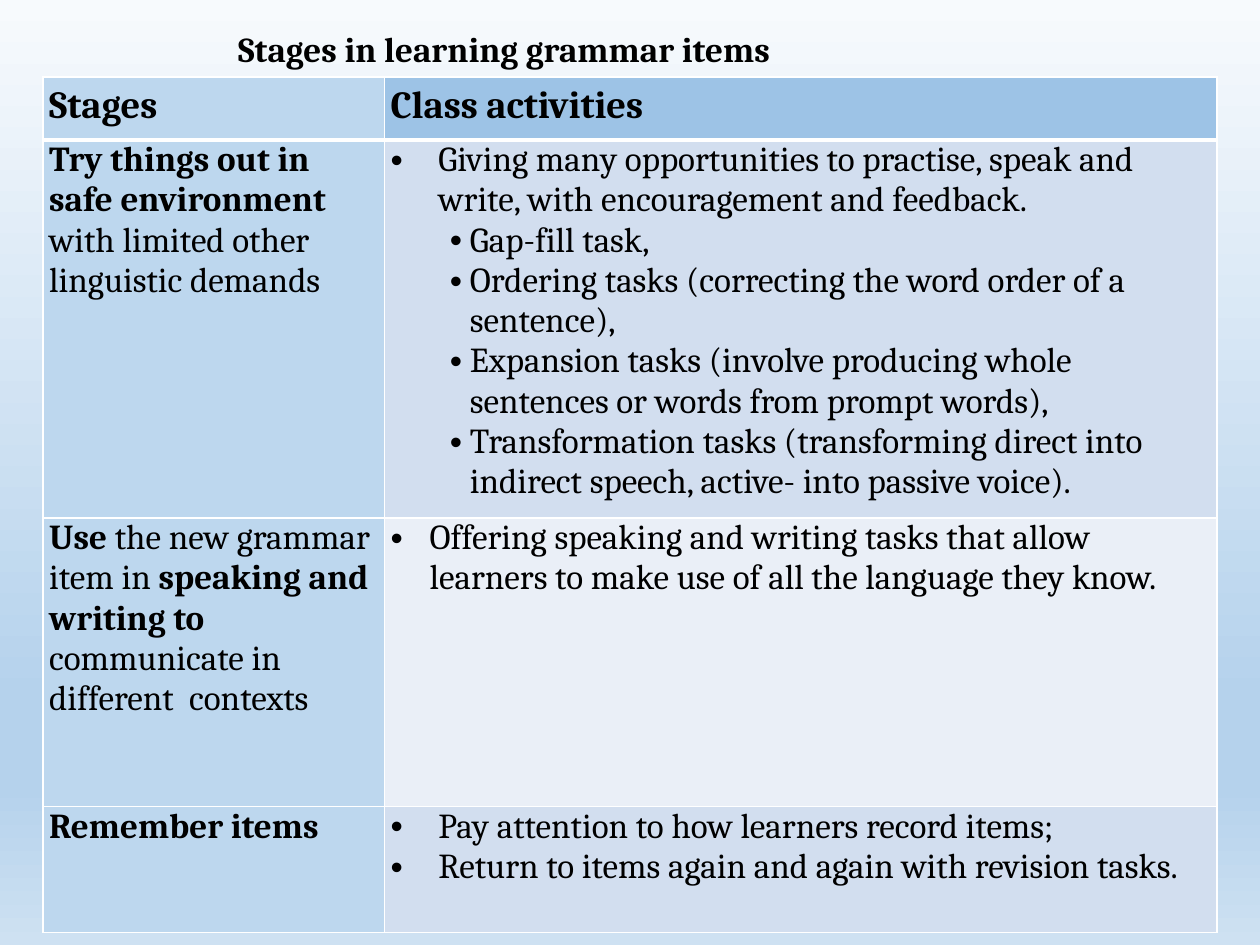
from dataclasses import dataclass

import pptx
import pptx.dml.color
import pptx.enum.text
import pptx.oxml
import pptx.oxml.ns
import pptx.util
from lxml import etree

Inches = pptx.util.Inches
Pt = pptx.util.Pt
RGBColor = pptx.dml.color.RGBColor
qn = pptx.oxml.ns.qn

FONT = "Cambria"
BLACK = RGBColor(0x00, 0x00, 0x00)
WHITE = RGBColor(0xFF, 0xFF, 0xFF)
STAGE_BLUE = RGBColor(0xBD, 0xD7, 0xEE)
HEADER_BLUE = RGBColor(0x9D, 0xC3, 0xE6)
DARK_BAND = RGBColor(0xD2, 0xDE, 0xEF)
LIGHT_BAND = RGBColor(0xEA, 0xEF, 0xF7)
BACKGROUND_STOPS = (
    (0, RGBColor(0xF7, 0xFA, 0xFD)),
    (74, RGBColor(0xB5, 0xD2, 0xEC)),
    (83, RGBColor(0xB5, 0xD2, 0xEC)),
    (100, RGBColor(0xCE, 0xE1, 0xF2)),
)


@dataclass(frozen=True)
class Span:
    text: str
    bold: bool = False


@dataclass(frozen=True)
class Activity:
    text: str
    indent: float = 0.38
    hanging: float = 0.38
    level: int = 0


@dataclass(frozen=True)
class Stage:
    spans: tuple[Span, ...]
    activities: tuple[Activity, ...]
    height: float
    band: RGBColor


def subtask(text: str) -> Activity:
    return Activity(text, indent=0.63, hanging=0.16, level=1)


HEADER_HEIGHT = 0.5
HEADERS = (("Stages", STAGE_BLUE), ("Class activities", HEADER_BLUE))
COLUMN_WIDTHS = (2.71, 6.61)
STAGES = (
    Stage(
        (Span("Try things out in safe environment ", True),
         Span("with limited other linguistic demands")),
        (Activity("Giving many opportunities to practise, speak and write, "
                  "with encouragement and feedback."),
         subtask("Gap-fill task,"),
         subtask("Ordering tasks (correcting the word order of a sentence),"),
         subtask("Expansion tasks (involve producing whole sentences or words "
                 "from prompt words),"),
         subtask("Transformation tasks (transforming direct into indirect speech, "
                 "active- into passive voice).")),
        2.99, DARK_BAND),
    Stage(
        (Span("Use ", True), Span("the new grammar item in "),
         Span("speaking and writing to ", True),
         Span("communicate in different  contexts")),
        (Activity("Offering speaking and writing tasks that allow learners to make "
                  "use of all the language they know.", indent=0.31, hanging=0.31),),
        2.29, LIGHT_BAND),
    Stage(
        (Span("Remember items", True),),
        (Activity("Pay attention to how learners record items;"),
         Activity("Return to items again and again with revision tasks.")),
        1.0, DARK_BAND),
)


def add_run(paragraph, span: Span, size: int = 20) -> None:
    run = paragraph.add_run()
    run.text = span.text
    run.font.name = FONT
    run.font.size = Pt(size)
    run.font.bold = span.bold
    run.font.color.rgb = BLACK


def add_color(parent, color: RGBColor) -> None:
    etree.SubElement(parent, qn("a:srgbClr"), val=str(color))


def paint_background(slide) -> None:
    slide.background.fill.gradient()
    gradient = slide.background._cSld.find(".//" + qn("a:gradFill"))
    for child in list(gradient):
        gradient.remove(child)
    stops = etree.SubElement(gradient, qn("a:gsLst"))
    for percent, color in BACKGROUND_STOPS:
        add_color(etree.SubElement(stops, qn("a:gs"), pos=str(percent * 1000)), color)
    etree.SubElement(gradient, qn("a:lin"), ang="5400000", scaled="0")


def style_cell(cell, fill: RGBColor, bottom_width: int = 1, top_width: int = 1) -> None:
    cell.margin_left = cell.margin_right = Inches(0.05)
    cell.margin_top = cell.margin_bottom = 0
    cell.fill.solid()
    cell.fill.fore_color.rgb = fill
    properties = cell._tc.get_or_add_tcPr()
    borders = (("a:lnL", 1), ("a:lnR", 1), ("a:lnT", top_width), ("a:lnB", bottom_width))
    for position, (side, width) in enumerate(borders):
        line = etree.Element(qn(side), w=str(Pt(width)))
        add_color(etree.SubElement(line, qn("a:solidFill")), WHITE)
        properties.insert(position, line)


def add_bullet(paragraph, activity: Activity) -> None:
    paragraph.level = activity.level
    properties = paragraph._p.get_or_add_pPr()
    properties.set("marL", str(Inches(activity.indent)))
    properties.set("indent", str(-Inches(activity.hanging)))
    etree.SubElement(properties, qn("a:buFont"), typeface="Arial")
    etree.SubElement(properties, qn("a:buChar"), char="•")


def write_activities(cell, activities: tuple[Activity, ...]) -> None:
    frame = cell.text_frame
    for index, activity in enumerate(activities):
        paragraph = frame.add_paragraph() if index else frame.paragraphs[0]
        add_bullet(paragraph, activity)
        add_run(paragraph, Span(activity.text))


def add_title(slide, text: str) -> None:
    title = slide.shapes.title
    title.left, title.top = Inches(1.79), Inches(0.17)
    title.width, title.height = Inches(6.68), Inches(0.44)
    frame = title.text_frame
    frame.word_wrap = True
    frame.auto_size = pptx.enum.text.MSO_AUTO_SIZE.SHAPE_TO_FIT_TEXT
    frame.vertical_anchor = pptx.enum.text.MSO_ANCHOR.TOP
    heading = frame.paragraphs[0]
    heading.alignment = pptx.enum.text.PP_ALIGN.LEFT
    add_run(heading, Span(text, True))


def add_stage_table(slide) -> None:
    heights = [HEADER_HEIGHT] + [stage.height for stage in STAGES]
    table = slide.shapes.add_table(
        len(heights), len(COLUMN_WIDTHS), Inches(0.34), Inches(0.61),
        Inches(sum(COLUMN_WIDTHS)), Inches(sum(heights))).table
    for column, width in zip(table.columns, COLUMN_WIDTHS):
        column.width = Inches(width)
    for row, height in zip(table.rows, heights):
        row.height = Inches(height)

    for column, (label, fill) in enumerate(HEADERS):
        cell = table.cell(0, column)
        style_cell(cell, fill, bottom_width=3)
        paragraph = cell.text_frame.paragraphs[0]
        paragraph.line_spacing = 1.15
        add_run(paragraph, Span(label, True), size=22)

    for row, stage in enumerate(STAGES, start=1):
        top_width = 3 if row == 1 else 1
        name_cell, activity_cell = table.cell(row, 0), table.cell(row, 1)
        style_cell(name_cell, STAGE_BLUE, top_width=top_width)
        style_cell(activity_cell, stage.band, top_width=top_width)
        for span in stage.spans:
            add_run(name_cell.text_frame.paragraphs[0], span)
        write_activities(activity_cell, stage.activities)


def main() -> None:
    presentation = pptx.Presentation()
    presentation.slide_width, presentation.slide_height = Inches(10), Inches(7.5)
    slide = presentation.slides.add_slide(presentation.slide_layouts.get_by_name("Title Only"))
    paint_background(slide)
    add_title(slide, "Stages in learning grammar items")
    add_stage_table(slide)
    presentation.save("out.pptx")


if __name__ == "__main__":
    main()
